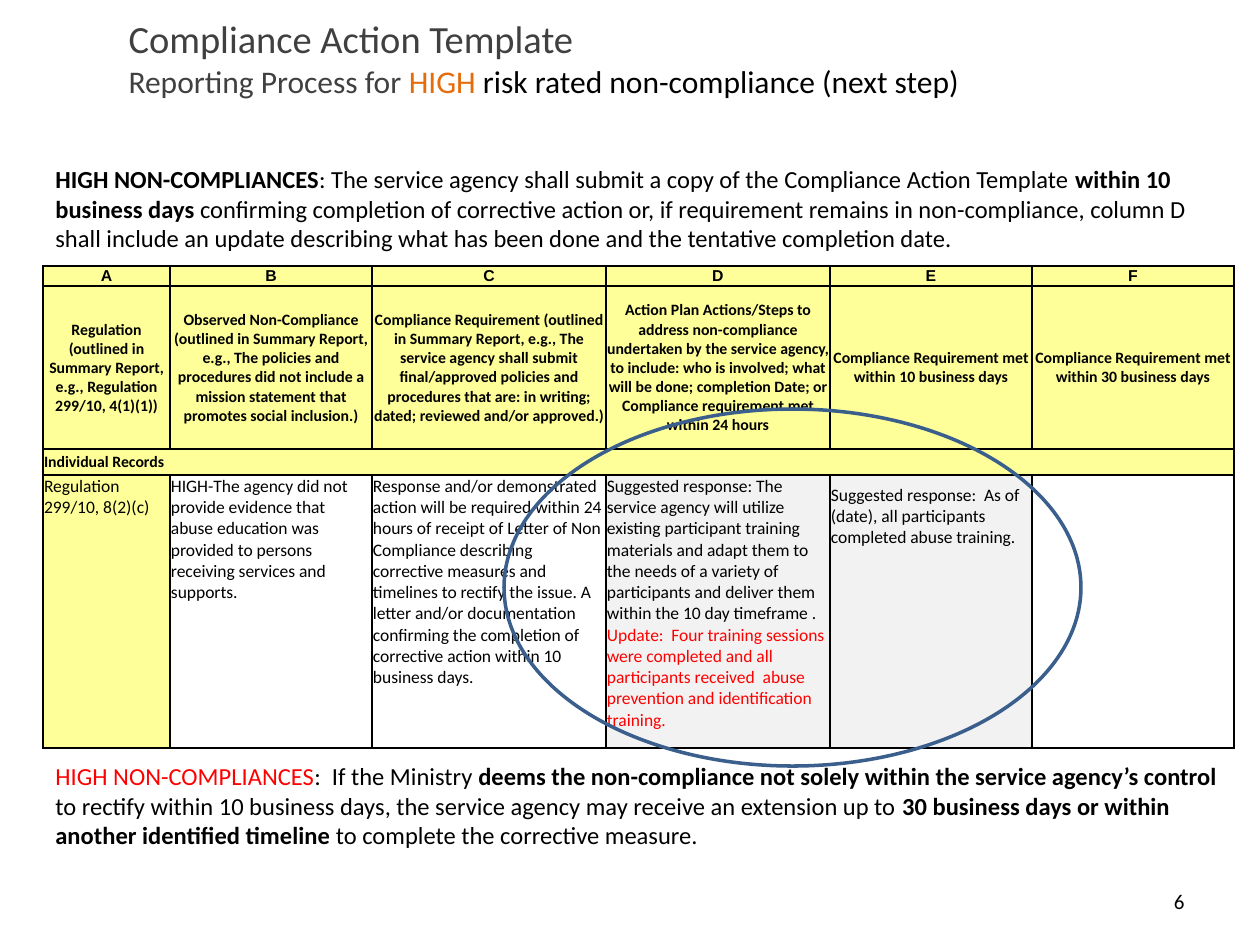
from lxml import etree
from pptx import Presentation
from pptx.dml.color import RGBColor
from pptx.enum.shapes import MSO_SHAPE
from pptx.enum.text import MSO_ANCHOR, MSO_AUTO_SIZE, PP_ALIGN
from pptx.oxml.ns import qn
from pptx.util import Emu, Pt

LEFT, CENTER, RIGHT = PP_ALIGN.LEFT, PP_ALIGN.CENTER, PP_ALIGN.RIGHT
TOP, MIDDLE = MSO_ANCHOR.TOP, MSO_ANCHOR.MIDDLE
CONNECTOR_CIRCLE = MSO_SHAPE.FLOWCHART_CONNECTOR
NO_AUTOFIT = MSO_AUTO_SIZE.NONE
TITLE_ONLY = 5
EMU_PER_PX = 914400 // 126

BLACK, GREY, ORANGE, RED = "000000", "404040", "E46C0A", "FF0000"
YELLOW, WHITE, PALE, BLUE = "FFFF99", "FFFFFF", "F2F2F2", "3A5F8C"


def px(length):
    return Emu(length * EMU_PER_PX)


def color(value):
    return RGBColor.from_string(value)


class SlideBuilder:
    font = "Calibri"

    def __init__(self, deck):
        self.page = deck.slides.add_slide(deck.slide_layouts[TITLE_ONLY])

    def add_span(self, para, text, size, ink=BLACK, bold=False, font=None):
        span = para.add_run()
        span.text = text
        span.font.name = font or self.font
        span.font.size = Pt(size)
        span.font.bold = bold
        span.font.color.rgb = color(ink)

    def title(self, place, lines):
        box = self.page.shapes.title
        box.left, box.top, box.width, box.height = map(px, place)
        frame = box.text_frame
        frame.word_wrap = True
        frame.auto_size = NO_AUTOFIT
        frame.vertical_anchor = MIDDLE
        para = frame.paragraphs[0]
        para.alignment = LEFT
        for index, (size, spans) in enumerate(lines):
            if index:
                para.add_line_break()
            for text, ink in spans:
                self.add_span(para, text, size, ink)

    def text(self, place, size, spans, align=LEFT, anchor=TOP):
        box = self.page.shapes.add_textbox(*map(px, place))
        frame = box.text_frame
        frame.word_wrap = True
        frame.vertical_anchor = anchor
        para = frame.paragraphs[0]
        para.alignment = align
        for text, ink, bold in spans:
            self.add_span(para, text, size, ink, bold)

    def table(self, left, top, widths, heights):
        frame = self.page.shapes.add_table(
            len(heights), len(widths), px(left), px(top),
            px(sum(widths)), px(sum(heights)))
        table = frame.table
        for column, width in zip(table.columns, widths):
            column.width = px(width)
        for row, height in zip(table.rows, heights):
            row.height = px(height)
        return table

    def cell(self, cell, spans, size, fill, bold=False, font=None,
             align=LEFT, anchor=TOP, inset=1):
        cell.margin_left = cell.margin_right = px(1)
        cell.margin_top, cell.margin_bottom = px(inset), 0
        cell.vertical_anchor = anchor
        self.borders(cell)
        cell.fill.solid()
        cell.fill.fore_color.rgb = color(fill)
        para = cell.text_frame.paragraphs[0]
        para.alignment = align
        for text, ink in spans:
            self.add_span(para, text, size, ink, bold, font)
        if not spans:
            etree.SubElement(para._p, qn("a:endParaRPr"), sz=str(size * 100))

    def borders(self, cell):
        properties = cell._tc.get_or_add_tcPr()
        for side in ("a:lnL", "a:lnR", "a:lnT", "a:lnB"):
            line = etree.SubElement(properties, qn(side), w=str(Pt(1)))
            fill = etree.SubElement(line, qn("a:solidFill"))
            etree.SubElement(fill, qn("a:srgbClr"), val=BLACK)

    def ring(self, place, ink, weight):
        shape = self.page.shapes.add_shape(CONNECTOR_CIRCLE, *map(px, place))
        shape.shadow.inherit = False
        shape.fill.background()
        shape.line.color.rgb = color(ink)
        shape.line.width = Pt(weight)


HEADINGS = [
    "Regulation (outlined in Summary Report, e.g., Regulation 299/10, 4(1)(1))",
    "Observed Non-Compliance (outlined in Summary Report, e.g., The policies and "
    "procedures did not include a mission statement that promotes social inclusion.)",
    "Compliance Requirement (outlined in Summary Report, e.g., The service agency "
    "shall submit final/approved policies and procedures that are: in writing; "
    "dated; reviewed and/or approved.)",
    "Action Plan Actions/Steps to address non-compliance undertaken by the service "
    "agency, to include: who is involved; what will be done; completion Date; or "
    "Compliance requirement met within 24 hours",
    "Compliance Requirement met within 10 business days",
    "Compliance Requirement met within 30 business days",
]

# Each record cell: fill, top inset, spans
RECORD = [
    (YELLOW, 1, [("Regulation 299/10, 8(2)(c)", BLACK)]),
    (WHITE, 1, [("HIGH-The agency did not provide evidence that abuse education was "
                 "provided to persons receiving services and supports.", BLACK)]),
    (WHITE, 1, [("Response and/or demonstrated action will be required within 24 hours "
                 "of receipt of Letter of Non Compliance describing corrective measures "
                 "and timelines to rectify the issue. A letter and/or documentation "
                 "confirming the completion of corrective action within 10 business "
                 "days.", BLACK)]),
    (PALE, 1, [("Suggested response: The service agency will utilize existing "
                "participant training materials and adapt them to the needs of a "
                "variety of participants and deliver them within the 10 day "
                "timeframe .  ", BLACK),
               ("Update:  Four training sessions were completed and all  participants "
                "received  abuse prevention and identification training.", RED)]),
    (PALE, 10, [("Suggested response:  As of (date), all participants completed abuse "
                 "training.", BLACK)]),
    (WHITE, 1, []),
]


def main():
    deck = Presentation()
    deck.slide_width, deck.slide_height = px(1260), px(945)
    slide = SlideBuilder(deck)

    # Title
    slide.title((116, 21, 945, 73), [
        (22, [("Compliance Action Template", GREY)]),
        (18, [("Reporting Process for ", GREY), ("HIGH ", ORANGE),
              ("risk rated non-compliance (next step)", BLACK)]),
    ])

    # Page number and introduction
    slide.text((903, 876, 294, 50), 12, [("6", BLACK, False)], RIGHT, MIDDLE)
    slide.text((43, 158, 1191, 102), 14, [
        ("HIGH NON-COMPLIANCES", BLACK, True),
        (": The service agency shall submit a copy of the Compliance Action Template ",
         BLACK, False),
        ("within 10 business days ", BLACK, True),
        ("confirming completion of corrective action or, if requirement remains in "
         "non-compliance, column D shall include an update describing what has been "
         "done and the tentative completion date.", BLACK, False),
    ])

    # Action table
    table = slide.table(43, 266, [127, 202, 234, 224, 202, 202], [20, 163, 26, 273])
    for index, (letter, heading) in enumerate(zip("ABCDEF", HEADINGS)):
        slide.cell(table.cell(0, index), [(letter, BLACK)], 9, YELLOW, True,
                   "Arial", CENTER, MIDDLE)
        slide.cell(table.cell(1, index), [(heading, BLACK)], 9, YELLOW, True,
                   align=CENTER, anchor=MIDDLE)
        section = [] if index else [("Individual Records", BLACK)]
        slide.cell(table.cell(2, index), section, 9, YELLOW, True, anchor=MIDDLE)
    table.cell(2, 0).merge(table.cell(2, 5))
    for index, (fill, inset, spans) in enumerate(RECORD):
        slide.cell(table.cell(3, index), spans, 10, fill, inset=inset)

    # Extension note
    slide.text((43, 755, 1191, 131), 14, [
        ("HIGH NON-COMPLIANCES", RED, False),
        (":  If the Ministry ", BLACK, False),
        ("deems the non-compliance not solely within the service agency’s control ",
         BLACK, True),
        ("to rectify within 10 business days, the service agency may receive an "
         "extension up to ", BLACK, False),
        ("30 business days or within another identified timeline ", BLACK, True),
        ("to complete the corrective measure.", BLACK, False),
    ])

    # Highlight ring over the response columns
    slide.ring((504, 409, 577, 357), BLUE, 2)

    deck.save("out.pptx")


if __name__ == "__main__":
    main()
